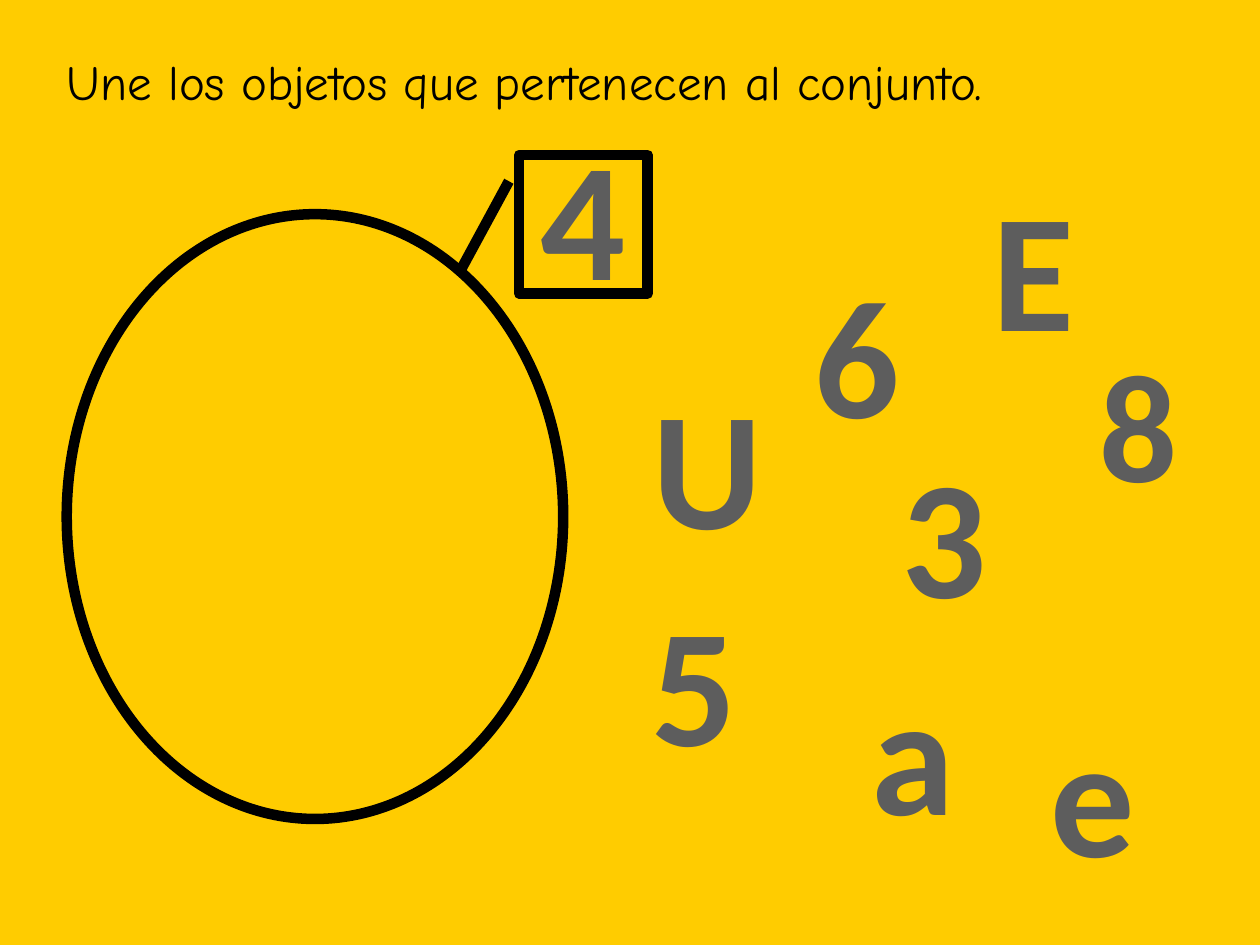
from lxml import etree
from pptx import Presentation
from pptx.dml.color import RGBColor
from pptx.enum.shapes import MSO_SHAPE
from pptx.enum.text import MSO_AUTO_SIZE, PP_ALIGN
from pptx.oxml import parse_xml
from pptx.util import Inches, Pt

BLACK = RGBColor(0x00, 0x00, 0x00)
WHITE = RGBColor(0xFF, 0xFF, 0xFF)
YELLOW = RGBColor(0xFF, 0xCC, 0x00)
GRAY = RGBColor(0x55, 0x55, 0x55)
MID_GRAY = RGBColor(0x5D, 0x5D, 0x5D)

NAMESPACE = "http://schemas.openxmlformats.org/drawingml/2006/main"
GLYPH_STOPS = [(0, GRAY), (49, MID_GRAY), (50, BLACK), (95, BLACK), (100, BLACK)]
TITLE_FORMAT = {"name": "Comic Neue", "size": Pt(28)}
GLYPH_FORMAT = {"name": "Calibri", "size": Pt(96), "bold": True}

CALLOUT_GLYPH = ("4", (4.19, 0.84, 0.88, 1.72), 96)
LOOSE_GLYPHS = [
    ("8", (8.62, 2.56, 0.83, 1.58), 88),
    ("a", (6.81, 5.09, 0.87, 1.72), 96),
    ("E", (7.77, 1.25, 0.86, 1.72), 96),
    ("6", (6.36, 1.94, 0.88, 1.72), 96),
    ("5", (5.07, 4.54, 0.88, 1.72), 96),
    ("3", (7.05, 3.37, 0.88, 1.72), 96),
    ("U", (5.07, 2.82, 1.08, 1.72), 96),
    ("e", (8.23, 5.42, 0.88, 1.72), 96),
]


def add_text(page, text, box, text_format, align=None):
    """Place one unwrapped line of text and return its run."""
    frame = page.shapes.add_textbox(*map(Inches, box)).text_frame
    frame.word_wrap = False
    frame.auto_size = MSO_AUTO_SIZE.SHAPE_TO_FIT_TEXT
    para = frame.paragraphs[0]
    para.alignment = align
    span = para.add_run()
    span.text = text
    for name, value in text_format.items():
        setattr(span.font, name, value)
    return span


def add_title(page, box):
    """Place the instruction at the top of the page."""
    span = add_text(page, "Une los objetos que pertenecen al conjunto.", box, TITLE_FORMAT)
    span.font.color.rgb = BLACK


def add_glyph(page, text, box, size):
    """Place a large character with a gradient fill and a thin outline."""
    glyph_format = {**GLYPH_FORMAT, "size": Pt(size)}
    span = add_text(page, text, box, glyph_format, PP_ALIGN.CENTER)
    stops = "".join(
        f'<a:gs pos="{percent * 1000}"><a:srgbClr val="{color}"/></a:gs>'
        for percent, color in GLYPH_STOPS
    )
    outline = (
        f'<a:ln xmlns:a="{NAMESPACE}" w="{Pt(1.4)}"><a:solidFill>'
        f'<a:srgbClr val="{WHITE}"/></a:solidFill></a:ln>'
    )
    gradient = (
        f'<a:gradFill xmlns:a="{NAMESPACE}"><a:gsLst>{stops}</a:gsLst>'
        f'<a:lin ang="5400000"/></a:gradFill>'
    )
    properties = span.font._element
    for index, xml in enumerate((outline, gradient)):
        properties.insert(index, parse_xml(xml))


def add_outline(page, kind, box):
    """Place an unfilled shape with a heavy black line."""
    shape = page.shapes.add_shape(kind, *map(Inches, box))
    shape.shadow.inherit = False
    shape.fill.background()
    shape.line.color.rgb = BLACK
    shape.line.width = Pt(6)
    return shape


def add_set(page, set_box, callout_box):
    """Place the empty set and the callout that names its member."""
    add_outline(page, MSO_SHAPE.OVAL, set_box)
    callout = add_outline(page, MSO_SHAPE.LINE_CALLOUT_1, callout_box)
    for index, value in enumerate((0.19, -0.08, 0.84, -0.46)):
        callout.adjustments[index] = value
    add_glyph(page, *CALLOUT_GLYPH)


def main():
    """Build the worksheet page and save it."""
    deck = Presentation()
    deck.slide_width, deck.slide_height = Inches(10), Inches(7.5)
    page = deck.slides.add_slide(deck.slide_layouts[6])
    page.background.fill.solid()
    page.background.fill.fore_color.rgb = YELLOW
    add_title(page, (0.43, 0.36, 8.18, 0.57))
    add_set(page, (0.53, 1.7, 3.94, 4.8), (4.12, 1.23, 1.02, 1.1))
    for glyph in LOOSE_GLYPHS:
        add_glyph(page, *glyph)
    deck.save("out.pptx")


if __name__ == "__main__":
    main()
